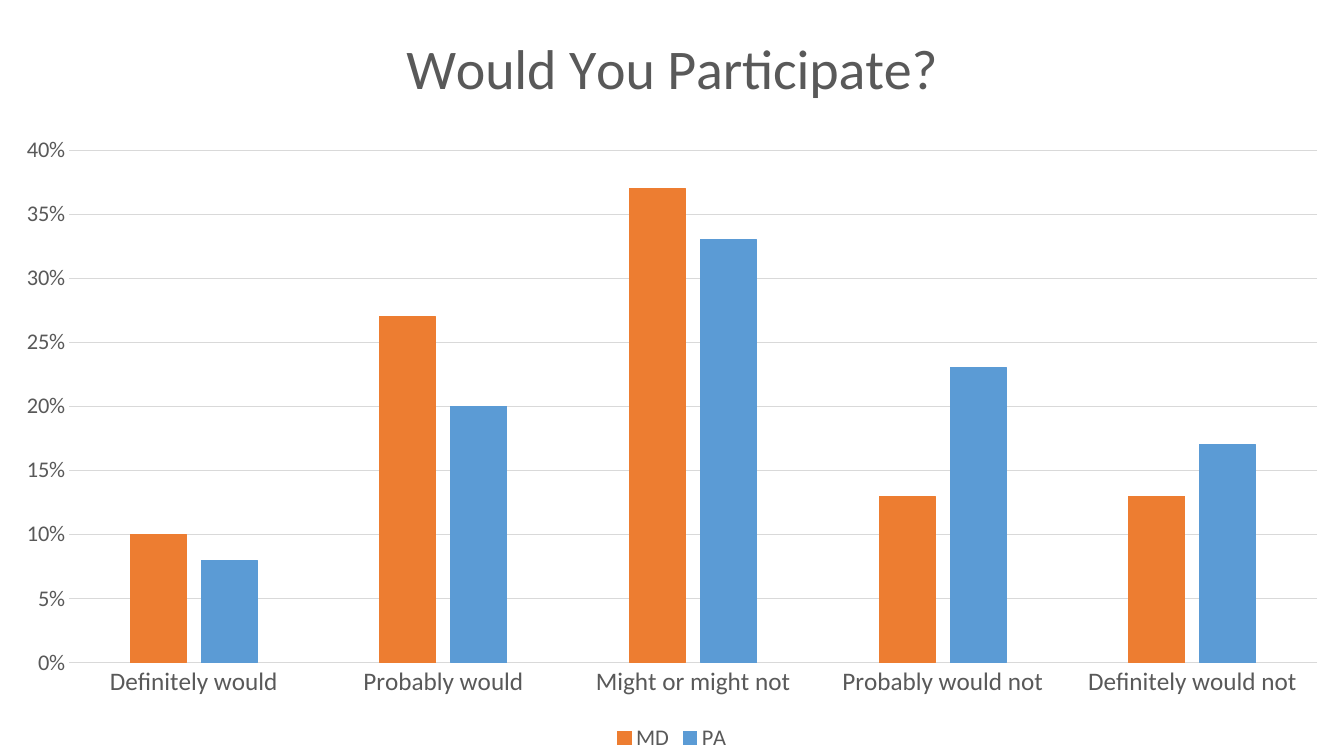
from pptx import Presentation
from pptx.chart.data import CategoryChartData
from pptx.dml.color import RGBColor
from pptx.enum import chart as charts
from pptx.util import Pt

WIDTH, HEIGHT = Pt(960), Pt(540)
FONT = "Calibri"
GREY = RGBColor(0x59, 0x59, 0x59)
RULE = RGBColor(0xD9, 0xD9, 0xD9)
ORANGE = RGBColor(0xED, 0x7D, 0x31)
BLUE = RGBColor(0x5B, 0x9B, 0xD5)

ANSWERS = ["Definitely would", "Probably would", "Might or might not",
           "Probably would not", "Definitely would not"]
STATES = [
    ("MD", ORANGE, [0.10, 0.27, 0.37, 0.13, 0.13]),
    ("PA", BLUE, [0.08, 0.20, 0.33, 0.23, 0.17]),
]


def style_font(font, size):
    """Set the chart's plain grey lettering at the given size."""
    font.name = FONT
    font.size = Pt(size)
    font.bold = False
    font.color.rgb = GREY


def style_line(line, color):
    """Draw a thin line in the given colour."""
    line.color.rgb = color
    line.width = Pt(0.75)


def style_title(chart, wording):
    """Write the chart title above the plot."""
    chart.has_title = True
    chart.chart_title.include_in_layout = False
    run = chart.chart_title.text_frame.paragraphs[0].add_run()
    run.text = wording
    style_font(run.font, 40)


def style_axes(chart):
    """Format the answer axis and the percentage axis."""
    for axis, size in ((chart.category_axis, 18), (chart.value_axis, 16)):
        axis.major_tick_mark = charts.XL_TICK_MARK.NONE
        axis.minor_tick_mark = charts.XL_TICK_MARK.NONE
        style_font(axis.tick_labels.font, size)
    style_line(chart.category_axis.format.line, RULE)

    percent = chart.value_axis
    percent.minimum_scale, percent.maximum_scale = 0, 0.4
    percent.major_unit = 0.05
    percent.format.line.fill.background()
    percent.has_major_gridlines = True
    style_line(percent.major_gridlines.format.line, RULE)
    percent.tick_labels.number_format = "0%"
    percent.tick_labels.number_format_is_linked = False


def style_legend(chart):
    """Place the legend under the plot."""
    chart.has_legend = True
    chart.legend.position = charts.XL_LEGEND_POSITION.BOTTOM
    chart.legend.include_in_layout = False
    style_font(chart.legend.font, 16)


def add_participation_chart(slide, left, top, width, height):
    """Add the clustered columns of both states in the given box."""
    data = CategoryChartData(number_format="0%")
    data.categories = ANSWERS
    for name, _, shares in STATES:
        data.add_series(name, shares)
    chart = slide.shapes.add_chart(
        charts.XL_CHART_TYPE.COLUMN_CLUSTERED, left, top, width, height, data
    ).chart
    chart.font.name = FONT
    chart.font.size = Pt(10)

    plot = chart.plots[0]
    plot.gap_width = 219
    plot.overlap = -27
    plot.vary_by_categories = False
    for series, (_, color, _) in zip(plot.series, STATES):
        series.format.fill.solid()
        series.format.fill.fore_color.rgb = color
        style_line(series.format.line, color)

    style_title(chart, "Would You Participate?")
    style_axes(chart)
    style_legend(chart)


def main():
    """Build and save the presentation."""
    presentation = Presentation()
    presentation.slide_width, presentation.slide_height = WIDTH, HEIGHT
    blank = presentation.slide_layouts.get_by_name("Blank")
    slide = presentation.slides.add_slide(blank)
    add_participation_chart(slide, Pt(0), Pt(0), WIDTH, HEIGHT)
    presentation.save("out.pptx")


if __name__ == "__main__":
    main()
